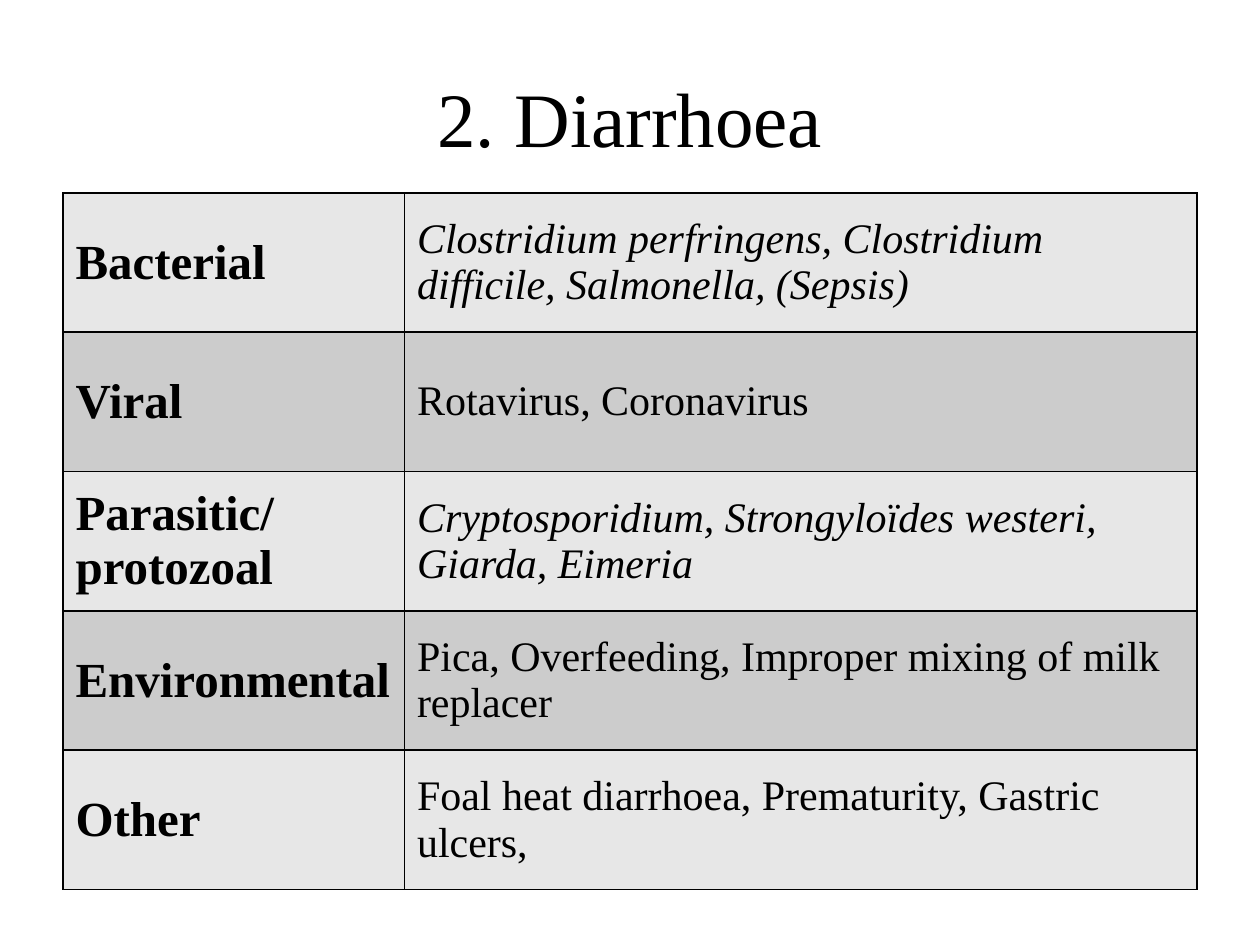
from pptx import Presentation
from pptx.dml.color import RGBColor
from pptx.enum.text import MSO_ANCHOR as Anchor, PP_ALIGN as Align
from pptx.oxml import parse_xml
from pptx.oxml.ns import nsdecls
from pptx.util import Inches, Pt

FONT = "Times New Roman"
COLORS = {"text": "000000", "border": "000000", "odd": "E7E7E7", "even": "CCCCCC"}
CAUSES = [
    ("Bacterial", "Clostridium perfringens, Clostridium difficile, Salmonella, (Sepsis)", True),
    ("Viral", "Rotavirus, Coronavirus", False),
    ("Parasitic/protozoal", "Cryptosporidium, Strongyloïdes westeri, Giarda, Eimeria", True),
    ("Environmental", "Pica, Overfeeding, Improper mixing of milk replacer", False),
    ("Other", "Foal heat diarrhoea, Prematurity, Gastric ulcers,", False),
]


def style_paragraph(para, size, bold=False, italic=False):
    """Set the font of a whole paragraph."""
    font = para.font
    font.name, font.size, font.bold, font.italic = FONT, Pt(size), bold, italic
    font.color.rgb = RGBColor.from_string(COLORS["text"])


def add_borders(cell):
    """Draw a one-point line on every side of a cell."""
    properties = cell._tc.get_or_add_tcPr()
    for index, side in enumerate(("lnL", "lnR", "lnT", "lnB")):
        properties.insert(index, parse_xml(
            f'<a:{side} {nsdecls("a")} w="{Pt(1)}"><a:solidFill>'
            f'<a:srgbClr val="{COLORS["border"]}"/></a:solidFill></a:{side}>'))


def fill_cell(cell, text, color, size, bold=False, italic=False):
    """Write and format one table cell."""
    cell.text = text
    cell.vertical_anchor = Anchor.MIDDLE
    cell.fill.solid()
    cell.fill.fore_color.rgb = RGBColor.from_string(color)
    style_paragraph(cell.text_frame.paragraphs[0], size, bold, italic)
    add_borders(cell)


def place_title(page, text, left, top, width, height):
    """Put the heading in the title placeholder."""
    title = page.shapes.title
    title.left, title.top, title.width, title.height = left, top, width, height
    title.text_frame.text = text
    title.text_frame.vertical_anchor = Anchor.MIDDLE
    para = title.text_frame.paragraphs[0]
    para.alignment = Align.CENTER
    style_paragraph(para, 44)


def place_causes(page, left, top, width, height):
    """Add the table of causes, one row for each group."""
    table = page.shapes.add_table(len(CAUSES), 2, left, top, width, height).table
    table.first_row = table.horz_banding = False
    table.columns[0].width = Inches(2.71)
    table.columns[1].width = width - Inches(2.71)
    for index, (group, causes, italic) in enumerate(CAUSES):
        color = COLORS["even" if index % 2 else "odd"]
        fill_cell(table.cell(index, 0), group, color, 28, bold=True)
        fill_cell(table.cell(index, 1), causes, color, 24, italic=italic)


def main():
    """Build and save the slide."""
    deck = Presentation()
    deck.slide_width, deck.slide_height = Inches(10), Inches(7.5)
    page = deck.slides.add_slide(deck.slide_layouts[5])
    left, width = Inches(0.5), Inches(9)
    place_title(page, "2. Diarrhoea", left, Inches(0.3), width, Inches(1.25))
    place_causes(page, left, Inches(1.53), width, Inches(5.53))
    deck.save("out.pptx")


if __name__ == "__main__":
    main()
